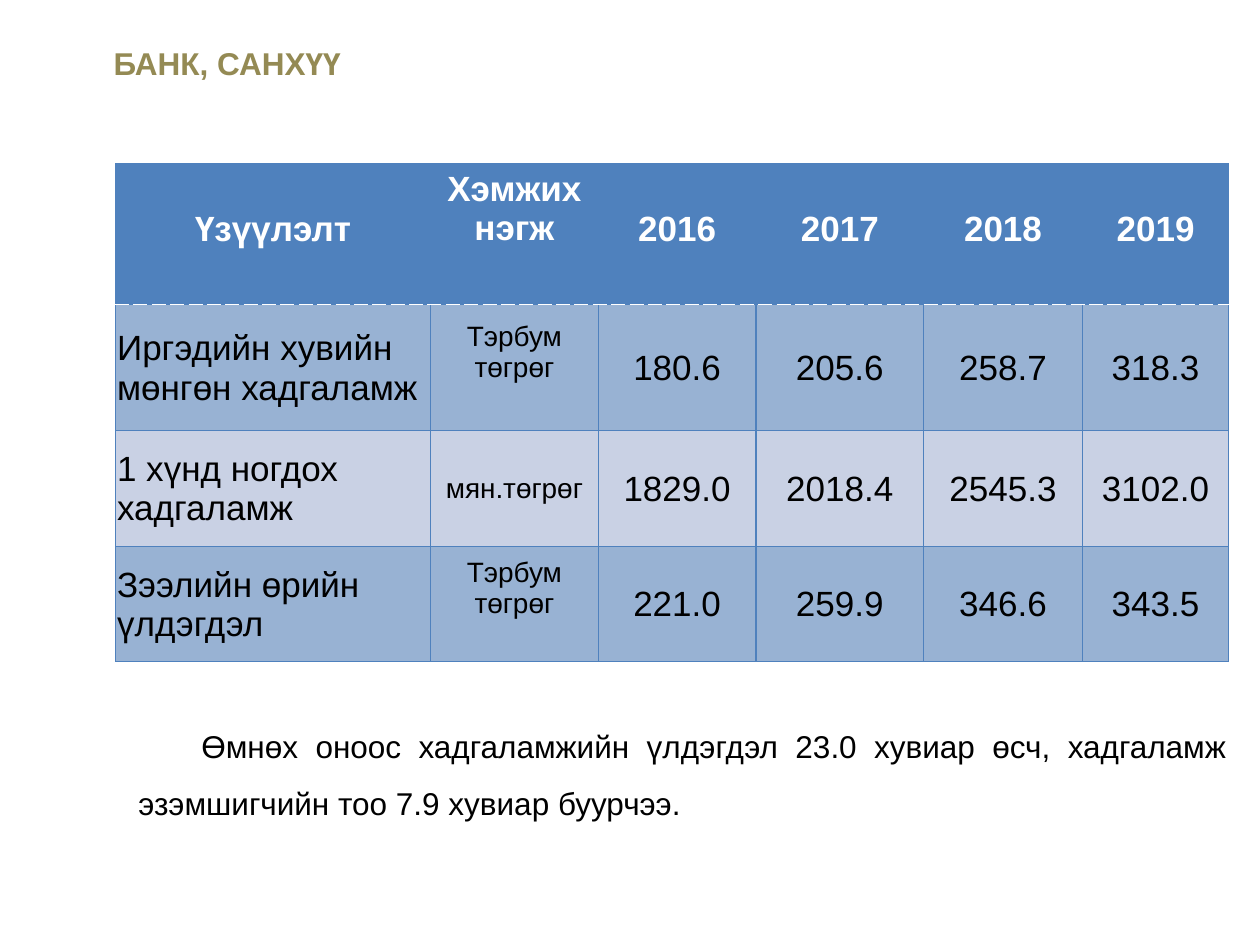
from lxml.etree import SubElement
from pptx import Presentation
from pptx.dml.color import RGBColor
from pptx.enum.shapes import MSO_SHAPE
from pptx.enum.text import MSO_ANCHOR, PP_ALIGN
from pptx.oxml.ns import qn
from pptx.util import Cm, Pt

BLUE = RGBColor(0x4F, 0x81, 0xBD)
BAND_DARK = RGBColor(0x98, 0xB2, 0xD3)
BAND_LIGHT = RGBColor(0xC9, 0xD1, 0xE4)
OLIVE = RGBColor(0x94, 0x8A, 0x54)
WHITE = RGBColor(0xFF, 0xFF, 0xFF)
BLACK = RGBColor(0, 0, 0)

COLUMN_WIDTHS = (6.35, 3.38, 3.18, 3.38, 3.2, 2.95)
ROW_HEIGHTS = (2.84, 2.54, 2.33, 2.33)
ROWS = (
    ("Үзүүлэлт", "Хэмжих нэгж", "2016", "2017", "2018", "2019"),
    ("Иргэдийн хувийн мөнгөн хадгаламж", "Тэрбум төгрөг",
     "180.6", "205.6", "258.7", "318.3"),
    ("1 хүнд ногдох хадгаламж", "мян.төгрөг",
     "1829.0", "2018.4", "2545.3", "3102.0"),
    ("Зээлийн өрийн үлдэгдэл", "Тэрбум төгрөг",
     "221.0", "259.9", "346.6", "343.5"),
)


def write(para, text, size, color, bold=False, align=PP_ALIGN.LEFT):
    para.text = text
    para.alignment = align
    font = para.font
    font.name = "Arial"
    font.size = Pt(size)
    font.bold = bold
    font.color.rgb = color


def add_border(cell, side, color, width, dash="solid"):
    line = SubElement(cell._tc.get_or_add_tcPr(), qn(f"a:{side}"), w=str(Pt(width)))
    fill = SubElement(line, qn("a:solidFill"))
    SubElement(fill, qn("a:srgbClr"), val=str(color))
    SubElement(line, qn("a:prstDash"), val=dash)


def style_borders(cell, row):
    for side in ("lnL", "lnR", "lnT", "lnB"):
        if (row, side) in ((0, "lnB"), (1, "lnT")):
            add_border(cell, side, WHITE, 0.9, "sysDash")
        else:
            add_border(cell, side, BLUE, 0.75)


def fill_header_cell(cell, column, text):
    cell.vertical_anchor = MSO_ANCHOR.TOP
    cell.margin_top = Cm(0.13 if column == 1 else 0.92)
    write(cell.text_frame.paragraphs[0], text, 20, WHITE, True, PP_ALIGN.CENTER)


def fill_body_cell(cell, column, text):
    cell.vertical_anchor = MSO_ANCHOR.MIDDLE
    cell.margin_left = cell.margin_right = cell.margin_top = Cm(0.03)
    raised = column == 1 and " " in text
    cell.margin_bottom = Cm(0.65 if raised else 0)
    write(cell.text_frame.paragraphs[0], text, 16 if column == 1 else 20, BLACK,
          align=PP_ALIGN.CENTER if column else PP_ALIGN.LEFT)


def add_title(page, left, top, width, height):
    box = page.shapes.add_shape(MSO_SHAPE.RECTANGLE, left, top, width, height)
    box.shadow.inherit = False
    box.fill.solid()
    box.fill.fore_color.rgb = WHITE
    box.line.fill.background()
    write(box.text_frame.paragraphs[0], "БАНК, САНХҮҮ", 18, OLIVE, True)


def add_indicators(page, left, top, width, height):
    table = page.shapes.add_table(len(ROWS), len(COLUMN_WIDTHS),
                                  left, top, width, height).table
    for column, size in zip(table.columns, COLUMN_WIDTHS):
        column.width = Cm(size)
    for row, size in zip(table.rows, ROW_HEIGHTS):
        row.height = Cm(size)
    fills = (BLUE, BAND_DARK, BAND_LIGHT, BAND_DARK)
    for row, texts in enumerate(ROWS):
        fill_cell = fill_body_cell if row else fill_header_cell
        for column, text in enumerate(texts):
            cell = table.cell(row, column)
            fill_cell(cell, column, text)
            style_borders(cell, row)
            cell.fill.solid()
            cell.fill.fore_color.rgb = fills[row]


def add_summary(page, left, top, width, height):
    box = page.shapes.add_textbox(left, top, width, height)
    box.text_frame.word_wrap = True
    para = box.text_frame.paragraphs[0]
    write(para, "Өмнөх оноос хадгаламжийн үлдэгдэл 23.0 хувиар өсч, "
          "хадгаламж эзэмшигчийн тоо 7.9 хувиар буурчээ.",
          18, BLACK, align=PP_ALIGN.JUSTIFY)
    para.line_spacing = 1.5
    properties = para._p.get_or_add_pPr()
    properties.set("marL", "0")
    properties.set("indent", str(Cm(1.27)))


def main():
    deck = Presentation()
    deck.slide_width, deck.slide_height = Cm(25.4), Cm(19.05)
    page = deck.slides.add_slide(deck.slide_layouts[6])
    add_indicators(page, Cm(2.33), Cm(3.3), Cm(sum(COLUMN_WIDTHS)), Cm(sum(ROW_HEIGHTS)))
    add_title(page, Cm(2.04), Cm(0.75), Cm(23.36), Cm(1.03))
    add_summary(page, Cm(2.54), Cm(14.15), Cm(22.44), Cm(2.57))
    deck.save("out.pptx")


if __name__ == "__main__":
    main()
